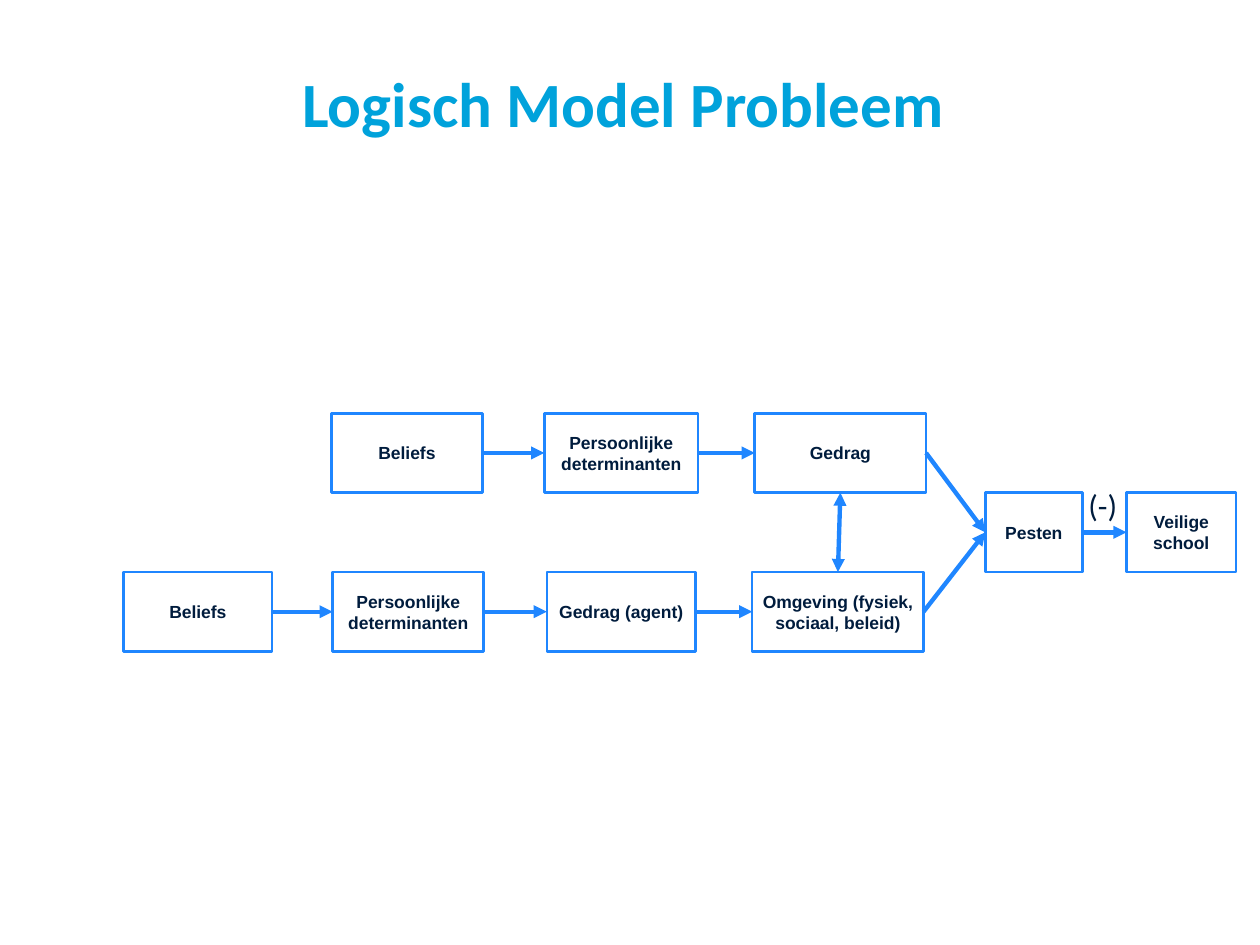
from lxml.etree import SubElement
from pptx import Presentation
from pptx.dml.color import RGBColor
from pptx.enum.shapes import MSO_CONNECTOR, MSO_SHAPE
from pptx.enum.text import MSO_ANCHOR, MSO_AUTO_SIZE, PP_ALIGN
from pptx.oxml.ns import qn
from pptx.util import Inches, Pt

COLORS = {"title": "00A2DB", "text": "001C3D", "line": "1F86FF"}
TOP, LEFT, BOTTOM, RIGHT = range(4)  # connection sites of a rectangle
BOX_HEIGHT = 0.63
UPPER_ROW, MIDDLE_ROW, LOWER_ROW = 3.28, 3.91, 4.54

# name: (text, left, top, width)
BOXES = {
    "beliefs": ("Beliefs", 2.63, UPPER_ROW, 1.2),
    "determinants": ("Persoonlijke determinanten", 4.32, UPPER_ROW, 1.22),
    "behaviour": ("Gedrag", 5.99, UPPER_ROW, 1.36),
    "agent beliefs": ("Beliefs", 0.98, LOWER_ROW, 1.18),
    "agent determinants": ("Persoonlijke determinanten", 2.64, LOWER_ROW, 1.2),
    "agent behaviour": ("Gedrag (agent)", 4.34, LOWER_ROW, 1.18),
    "environment": ("Omgeving (fysiek, sociaal, beleid)", 5.97, LOWER_ROW, 1.36),
    "bullying": ("Pesten", 7.82, MIDDLE_ROW, 0.77),
    "safe school": ("Veilige school", 8.94, MIDDLE_ROW, 0.87),
}
CHAINS = [
    ("beliefs", "determinants", "behaviour", "bullying", "safe school"),
    ("agent beliefs", "agent determinants", "agent behaviour", "environment", "bullying"),
]


def color(name):
    return RGBColor.from_string(COLORS[name])


def write(text_frame, text, size, font="Arial", bold=True, fill="text",
          align=PP_ALIGN.CENTER, spacing=None):
    paragraph = text_frame.paragraphs[0]
    paragraph.alignment = align
    paragraph.line_spacing = spacing
    run = paragraph.add_run()
    run.text = text
    run.font.name = font
    run.font.size = Pt(size)
    run.font.bold = bold
    run.font.color.rgb = color(fill)


def set_margins(text_frame, horizontal, vertical):
    text_frame.margin_left = text_frame.margin_right = Inches(horizontal)
    text_frame.margin_top = text_frame.margin_bottom = Inches(vertical)


def place_title(slide, left, top, width, height):
    title = slide.shapes.title
    title.left, title.top = Inches(left), Inches(top)
    title.width, title.height = Inches(width), Inches(height)
    text_frame = title.text_frame
    set_margins(text_frame, 0, 0)
    text_frame.vertical_anchor = MSO_ANCHOR.MIDDLE
    write(text_frame, "Logisch Model Probleem", 36, font="Calibri", fill="title", spacing=0.8)


def add_box(slide, text, left, top, width):
    shape = slide.shapes.add_shape(MSO_SHAPE.RECTANGLE, Inches(left), Inches(top),
                                   Inches(width), Inches(BOX_HEIGHT))
    shape.shadow.inherit = False
    shape.fill.background()
    shape.line.color.rgb = color("line")
    shape.line.width = Pt(1.5)
    text_frame = shape.text_frame
    text_frame.word_wrap = True
    text_frame.vertical_anchor = MSO_ANCHOR.MIDDLE
    set_margins(text_frame, 0.08, 0.05)
    write(text_frame, text, 10)
    return shape


def add_arrow(slide, start, end, start_site=RIGHT, end_site=LEFT, both_ends=False):
    connector = slide.shapes.add_connector(MSO_CONNECTOR.STRAIGHT, 0, 0, 0, 0)
    connector.begin_connect(start, start_site)
    connector.end_connect(end, end_site)
    connector.line.color.rgb = color("line")
    connector.line.width = Pt(2.5)
    line = connector.line._get_or_add_ln()
    for tag in ("a:headEnd", "a:tailEnd") if both_ends else ("a:tailEnd",):
        SubElement(line, qn(tag), type="triangle")
    SubElement(connector._element.spPr, qn("a:effectLst"))


def add_sign(slide, text, left, top, width, height):
    label = slide.shapes.add_textbox(Inches(left), Inches(top), Inches(width), Inches(height))
    label.text_frame.word_wrap = True
    label.text_frame.auto_size = MSO_AUTO_SIZE.SHAPE_TO_FIT_TEXT
    write(label.text_frame, text, 18, font="Calibri", bold=False, align=PP_ALIGN.LEFT)


def draw_model(slide):
    shapes = {name: add_box(slide, *box) for name, box in BOXES.items()}
    for chain in CHAINS:
        for start, end in zip(chain, chain[1:]):
            add_arrow(slide, shapes[start], shapes[end])
    add_arrow(slide, shapes["environment"], shapes["behaviour"], TOP, BOTTOM, both_ends=True)
    add_sign(slide, "(-)", 8.54, 3.81, 0.59, 0.4)


def main():
    presentation = Presentation()
    presentation.slide_width, presentation.slide_height = Inches(10), Inches(7.5)
    slide = presentation.slides.add_slide(presentation.slide_layouts[5])
    place_title(slide, 0.39, 0.45, 9.11, 0.83)
    draw_model(slide)
    presentation.save("out.pptx")


if __name__ == "__main__":
    main()
